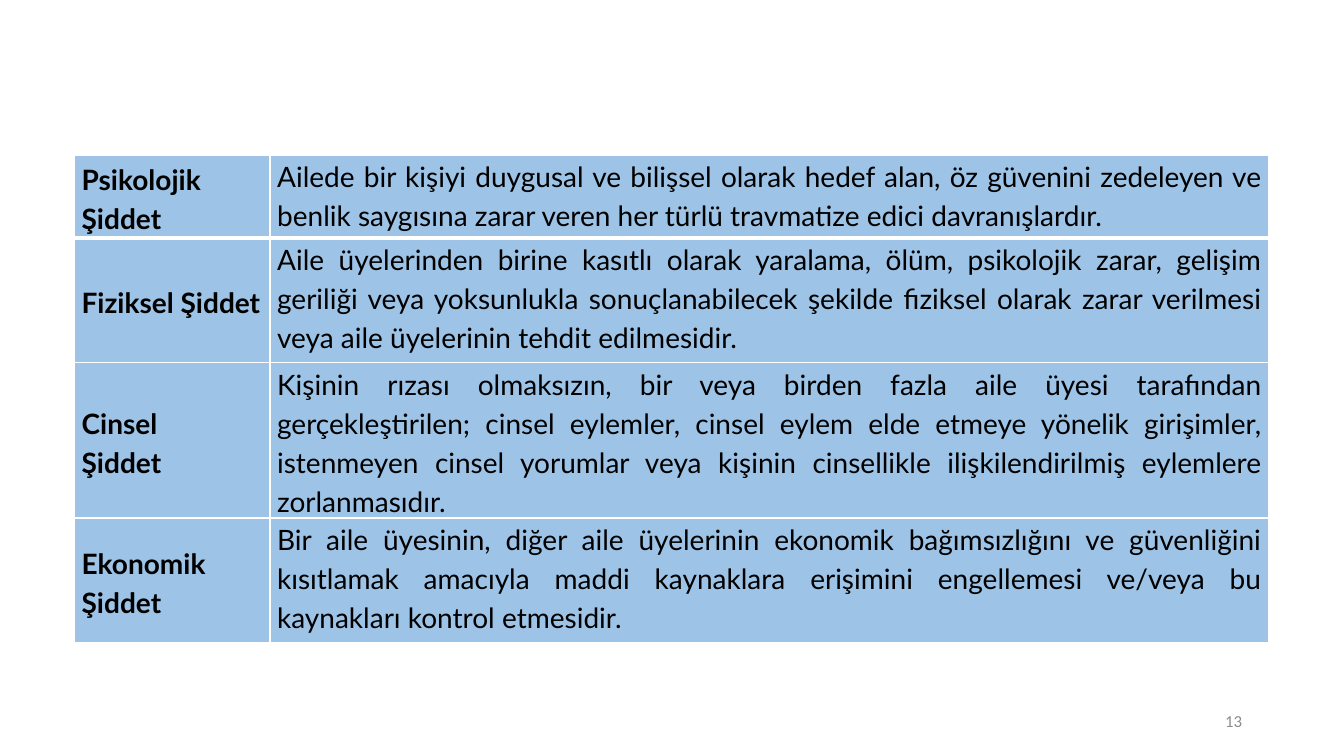
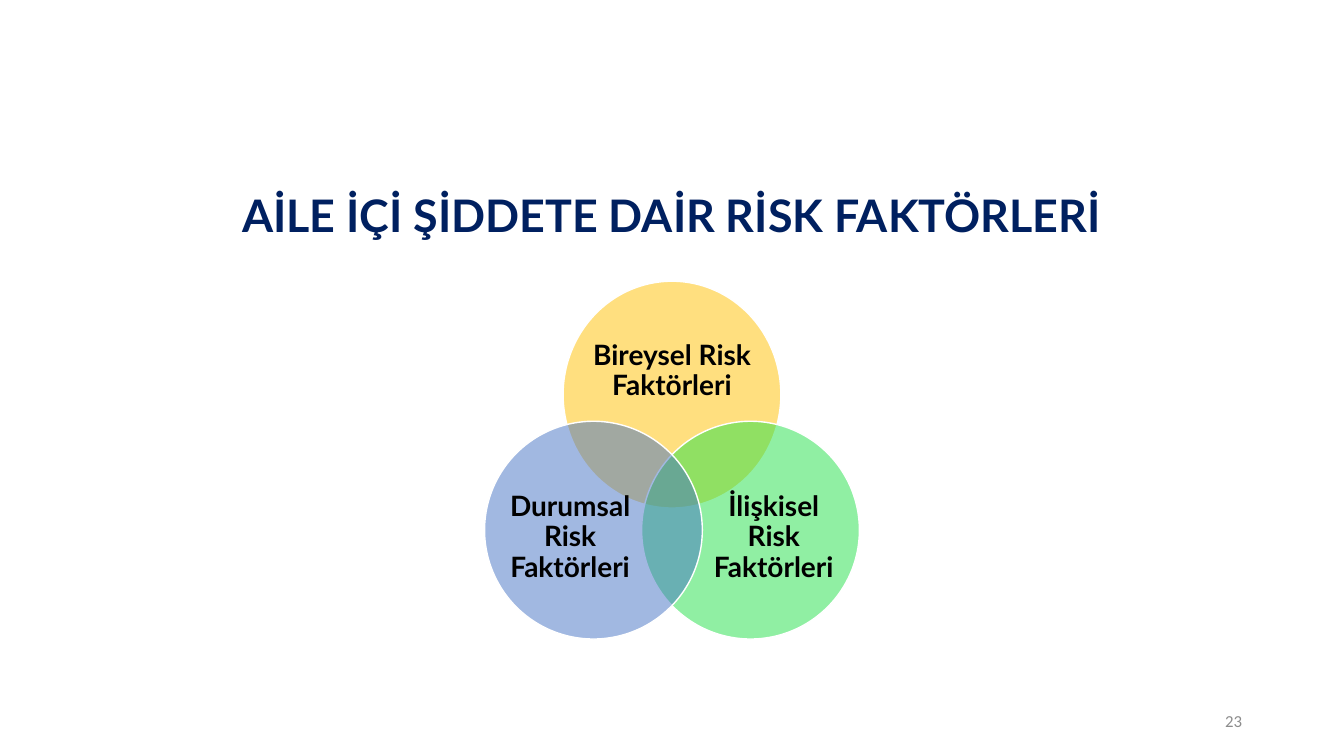
from dataclasses import dataclass

import lxml.etree
import pptx
import pptx.dml.color
import pptx.enum.shapes
import pptx.enum.text
import pptx.oxml.ns
import pptx.util

SLIDE_WIDTH = pptx.util.Inches(13.333)
SLIDE_HEIGHT = pptx.util.Inches(7.5)
GRID_COLUMNS = 64
GRID_ROWS = 36
CENTRE = GRID_COLUMNS / 2

BLACK = "000000"
WHITE = "FFFFFF"
NAVY = "002060"
GREY = "8C8C8C"
CELL_BLUE = "9DC3E6"
BODY_FONT = "Lato"
NUMBER_FONT = "Calibri"

ALIGN = pptx.enum.text.PP_ALIGN
ANCHOR = pptx.enum.text.MSO_ANCHOR


@dataclass(frozen=True)
class Area:
    left: float
    top: float
    width: float
    height: float

    def emu(self) -> tuple[int, int, int, int]:
        return (across(self.left), down(self.top),
                across(self.width), down(self.height))


@dataclass(frozen=True)
class TextStyle:
    size: int
    color: str = BLACK
    bold: bool = False
    font: str = BODY_FONT
    align: ALIGN = ALIGN.LEFT
    spacing: float = 1.0


@dataclass(frozen=True)
class ViolenceType:
    name: str
    definition: str
    rows: float


@dataclass(frozen=True)
class RiskCircle:
    label: str
    color: str
    circle: Area
    text: Area


TITLE = TextStyle(32, NAVY, True, align=ALIGN.CENTER, spacing=0.9)
CIRCLE_LABEL = TextStyle(20, bold=True, align=ALIGN.CENTER, spacing=0.9)
TYPE_NAME = TextStyle(20, bold=True, spacing=1.15)
TYPE_DEFINITION = TextStyle(20, align=ALIGN.JUSTIFY, spacing=1.15)
PAGE_NUMBER = TextStyle(12, GREY, font=NUMBER_FONT, align=ALIGN.RIGHT)

TITLE_AREA = Area(8, 4.32, 48, 7.44)
NUMBER_AREA = Area(45.22, 33.36, 14.4, 1.92)

TABLE_LEFT, TABLE_TOP = 3.55, 7.39
TABLE_COLUMNS = (9.31, 47.57)
CELL_MARGIN = 0.34
VIOLENCE_TYPES = (
    ViolenceType(
        "Psikolojik Şiddet",
        "Ailede bir kişiyi duygusal ve bilişsel olarak hedef alan, öz güvenini "
        "zedeleyen ve benlik saygısına zarar veren her türlü travmatize edici "
        "davranışlardır.", 3.94),
    ViolenceType(
        "Fiziksel Şiddet",
        "Aile üyelerinden birine kasıtlı olarak yaralama, ölüm, psikolojik "
        "zarar, gelişim geriliği veya yoksunlukla sonuçlanabilecek şekilde "
        "fiziksel olarak zarar verilmesi veya aile üyelerinin tehdit "
        "edilmesidir.", 5.95),
    ViolenceType(
        "Cinsel\nŞiddet",
        "Kişinin rızası olmaksızın, bir veya birden fazla aile üyesi tarafından "
        "gerçekleştirilen; cinsel eylemler, cinsel eylem elde etmeye yönelik "
        "girişimler, istenmeyen cinsel yorumlar veya kişinin cinsellikle "
        "ilişkilendirilmiş eylemlere zorlanmasıdır.", 7.39),
    ViolenceType(
        "Ekonomik Şiddet",
        "Bir aile üyesinin, diğer aile üyelerinin ekonomik bağımsızlığını ve "
        "güvenliğini kısıtlamak amacıyla maddi kaynaklara erişimini "
        "engellemesi ve/veya bu kaynakları kontrol etmesidir.", 5.95),
)


def across(columns: float) -> int:
    return round(SLIDE_WIDTH * columns / GRID_COLUMNS)


def down(rows: float) -> int:
    return round(SLIDE_HEIGHT * rows / GRID_ROWS)


def rgb(color: str) -> pptx.dml.color.RGBColor:
    return pptx.dml.color.RGBColor.from_string(color)


def centred(offset: float, top: float, width: float, height: float) -> Area:
    return Area(CENTRE + offset - width / 2, top, width, height)


def lower_circle(label: str, color: str, side: int) -> RiskCircle:
    return RiskCircle(label, color,
                      centred(side * 3.74, 20.06, 10.37, 10.37),
                      centred(side * 4.85, 22.75, 6.24, 5.71))


RISK_CIRCLES = (
    RiskCircle("Bireysel Risk Faktörleri", "FFC000",
               centred(0, 13.39, 10.37, 10.8),
               centred(0, 15.26, 7.58, 4.85)),
    lower_circle("İlişkisel Risk Faktörleri", "23E148", 1),
    lower_circle("Durumsal Risk Faktörleri", "4472C4", -1),
)


def write(frame, text: str, style: TextStyle) -> None:
    frame.text = text
    for paragraph in frame.paragraphs:
        paragraph.alignment = style.align
        paragraph.line_spacing = style.spacing
        paragraph.font.name = style.font
        paragraph.font.size = pptx.util.Pt(style.size)
        paragraph.font.bold = style.bold
        paragraph.font.color.rgb = rgb(style.color)


def add_text(slide, area: Area, text: str, style: TextStyle,
             anchor: ANCHOR = ANCHOR.MIDDLE, inset: bool = True) -> None:
    frame = slide.shapes.add_textbox(*area.emu()).text_frame
    frame.word_wrap = True
    frame.vertical_anchor = anchor
    if not inset:
        frame.margin_left = frame.margin_right = 0
        frame.margin_top = frame.margin_bottom = 0
    write(frame, text, style)


def add_border(cell, side: str, points: float) -> None:
    properties = cell._tc.get_or_add_tcPr()
    qn = pptx.oxml.ns.qn
    line = lxml.etree.SubElement(properties, qn(f"a:ln{side}"),
                                 w=str(pptx.util.Pt(points)))
    fill = lxml.etree.SubElement(line, qn("a:solidFill"))
    lxml.etree.SubElement(fill, qn("a:srgbClr"), val=WHITE)


def add_violence_table(slide) -> None:
    area = Area(TABLE_LEFT, TABLE_TOP, sum(TABLE_COLUMNS),
                sum(kind.rows for kind in VIOLENCE_TYPES))
    table = slide.shapes.add_table(
        len(VIOLENCE_TYPES), len(TABLE_COLUMNS), *area.emu()).table
    table.first_row = False
    table.horz_banding = False
    for column, width in zip(table.columns, TABLE_COLUMNS):
        column.width = across(width)
    for index, kind in enumerate(VIOLENCE_TYPES):
        row = table.rows[index]
        row.height = down(kind.rows)
        contents = ((kind.name, TYPE_NAME, ANCHOR.MIDDLE),
                    (kind.definition, TYPE_DEFINITION, ANCHOR.TOP))
        borders = {"L": 1, "R": 1, "T": 3 if index == 1 else 1,
                   "B": 3 if index == 0 else 1}
        for cell, (text, style, anchor) in zip(row.cells, contents):
            for side, points in borders.items():
                add_border(cell, side, points)
            cell.fill.solid()
            cell.fill.fore_color.rgb = rgb(CELL_BLUE)
            cell.margin_left = cell.margin_right = across(CELL_MARGIN)
            cell.margin_top = cell.margin_bottom = 0
            cell.vertical_anchor = anchor
            write(cell.text_frame, text, style)


def add_risk_circle(slide, risk: RiskCircle) -> None:
    circle = slide.shapes.add_shape(
        pptx.enum.shapes.MSO_SHAPE.OVAL, *risk.circle.emu())
    circle.shadow.inherit = False
    circle.fill.solid()
    circle.fill.fore_color.rgb = rgb(risk.color)
    qn = pptx.oxml.ns.qn
    tint = circle._element.spPr.find(qn("a:solidFill")).find(qn("a:srgbClr"))
    lxml.etree.SubElement(tint, qn("a:alpha"), val="50000")
    circle.line.color.rgb = rgb(WHITE)
    circle.line.width = pptx.util.Pt(1)
    add_text(slide, risk.text, risk.label, CIRCLE_LABEL, inset=False)


def add_slide(deck, number: int):
    slide = deck.slides.add_slide(deck.slide_layouts[6])
    add_text(slide, NUMBER_AREA, str(number), PAGE_NUMBER)
    return slide


def main() -> None:
    deck = pptx.Presentation()
    deck.slide_width = SLIDE_WIDTH
    deck.slide_height = SLIDE_HEIGHT

    add_violence_table(add_slide(deck, 13))

    risk_slide = add_slide(deck, 23)
    add_text(risk_slide, TITLE_AREA, "AİLE İÇİ ŞİDDETE DAİR RİSK FAKTÖRLERİ",
             TITLE, ANCHOR.BOTTOM)
    for risk in RISK_CIRCLES:
        add_risk_circle(risk_slide, risk)

    deck.save("out.pptx")


if __name__ == "__main__":
    main()
